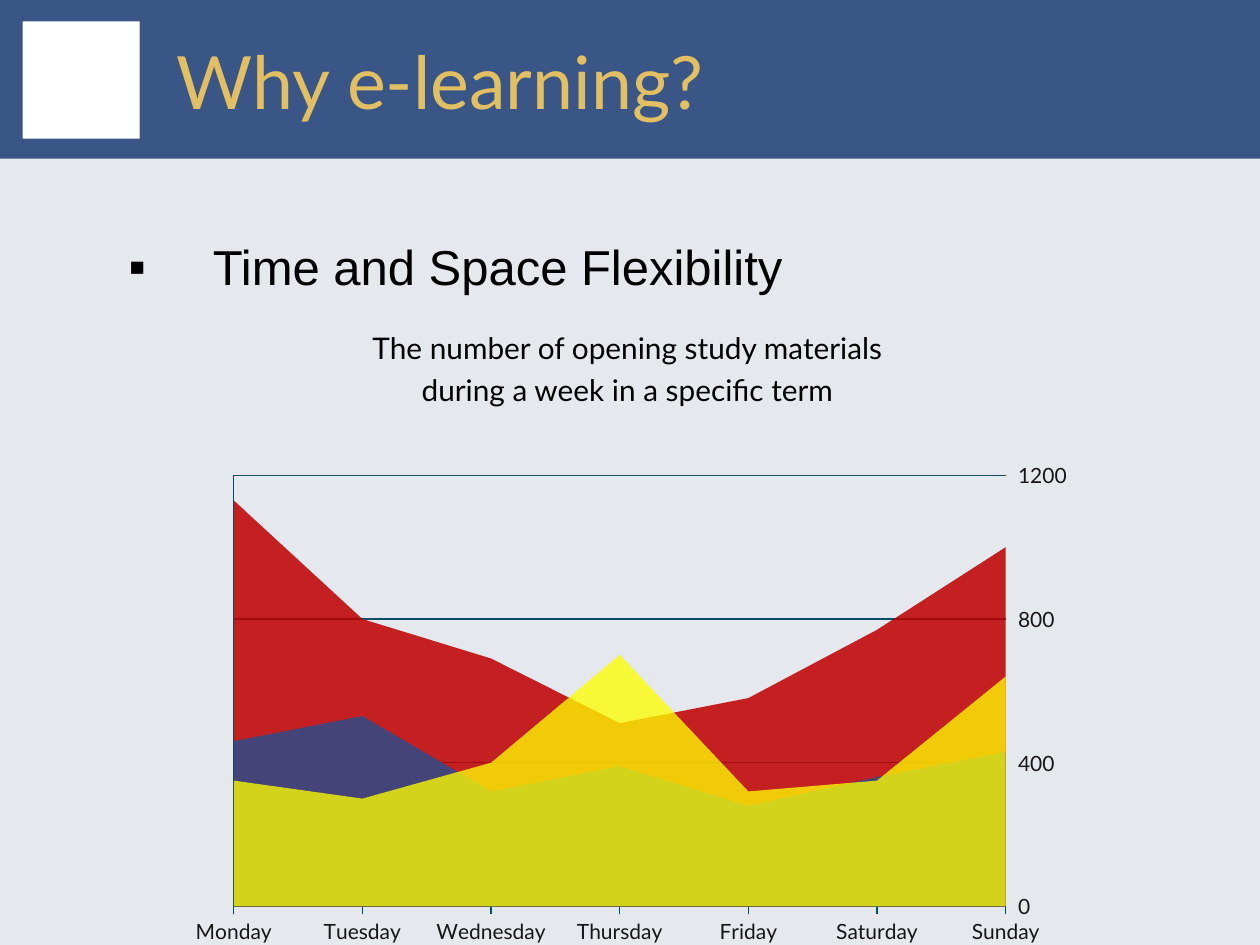
from dataclasses import dataclass

import pptx
import pptx.chart.data
import pptx.dml.color
import pptx.enum.chart
import pptx.enum.shapes
import pptx.enum.text
import pptx.oxml
import pptx.oxml.ns
import pptx.util
from pptx.util import Inches


@dataclass(frozen=True)
class Theme:
    background: str = "E5E8ED"
    band: str = "395686"
    white: str = "FFFFFF"
    title: str = "E1BF62"
    text: str = "000000"
    labels: str = "161616"
    axis: str = "004D66"
    heading_font: str = "Lato"
    body_font: str = "Arial"
    title_size: int = 42
    body_size: int = 28
    caption_size: int = 17
    label_size: int = 12


THEME = Theme()

DAYS = ["Monday", "Tuesday", "Wednesday", "Thursday", "Friday", "Saturday", "Sunday"]
# name, values, colour, opacity in percent
SERIES = [
    ("Series 1", [350, 300, 400, 700, 320, 350, 640], "FFFF00", 77),
    ("Series 2", [460, 530, 320, 390, 280, 360, 430], "444478", 100),
    ("Series 3", [1130, 800, 690, 510, 580, 770, 1000], "C00000", 86),
]


def rgb(colour):
    return pptx.dml.color.RGBColor.from_string(colour)


def add_child(parent, tag, **attributes):
    child = pptx.oxml.ns.qn(tag)
    element = parent.makeelement(child, attributes)
    parent.append(element)
    return element


def set_fill(fill, colour):
    fill.solid()
    fill.fore_color.rgb = rgb(colour)


def set_font(font, name, size, colour):
    font.name = name
    font.size = pptx.util.Pt(size)
    font.color.rgb = rgb(colour)


def add_rectangle(slide, left, top, width, height, colour):
    shape = slide.shapes.add_shape(
        pptx.enum.shapes.MSO_SHAPE.RECTANGLE,
        Inches(left), Inches(top), Inches(width), Inches(height),
    )
    shape.shadow.inherit = False
    set_fill(shape.fill, colour)
    shape.line.fill.background()
    return shape


def add_header(slide):
    """Draw the band and its square behind the placeholders."""
    band = add_rectangle(slide, 0, 0, 10, 1.26, THEME.band)
    square = add_rectangle(slide, 0.18, 0.17, 0.93, 0.93, THEME.white)
    title_element = slide.shapes.title._element
    for shape in (band, square):
        title_element.addprevious(shape._element)


def fill_placeholder(shape, text, left, top, width, height, anchor):
    shape.left, shape.top = Inches(left), Inches(top)
    shape.width, shape.height = Inches(width), Inches(height)
    frame = shape.text_frame
    frame.text = text
    frame.word_wrap = True
    frame.auto_size = pptx.enum.text.MSO_AUTO_SIZE.NONE
    frame.vertical_anchor = anchor
    paragraph = frame.paragraphs[0]
    paragraph.alignment = pptx.enum.text.PP_ALIGN.LEFT
    paragraph.space_before = pptx.util.Pt(0)
    return paragraph


def add_bullet(paragraph, character, indent):
    properties = paragraph._p.get_or_add_pPr()
    properties.set("marL", str(Inches(indent)))
    properties.set("indent", str(-Inches(indent)))
    colour = add_child(properties, "a:buClr")
    add_child(colour, "a:srgbClr", val=THEME.text)
    add_child(properties, "a:buFont", typeface=THEME.body_font)
    add_child(properties, "a:buChar", char=character)


def add_caption(slide, lines):
    box = slide.shapes.add_textbox(Inches(1.32), Inches(2.57), Inches(7.32), Inches(0.94))
    frame = box.text_frame
    frame.word_wrap = True
    frame.text = "\n".join(lines)
    for number, paragraph in enumerate(frame.paragraphs):
        paragraph.alignment = pptx.enum.text.PP_ALIGN.CENTER
        paragraph.space_before = pptx.util.Pt(0.2 * THEME.caption_size if number else 0)
        set_font(paragraph.font, THEME.heading_font, THEME.caption_size, THEME.text)


def set_line(line, colour, width):
    line.color.rgb = rgb(colour)
    line.width = pptx.util.Pt(width)


def format_axis(axis, tick):
    axis.major_tick_mark = tick
    axis.minor_tick_mark = pptx.enum.chart.XL_TICK_MARK.NONE
    set_font(axis.tick_labels.font, THEME.heading_font, THEME.label_size, THEME.labels)
    set_line(axis.format.line, THEME.axis, 0.75)


def set_plot_layout(chart, x, y, width, height):
    plot_area = chart._chartSpace.chart.plotArea
    for layout in plot_area.findall(pptx.oxml.ns.qn("c:layout")):
        plot_area.remove(layout)
    layout = plot_area.makeelement(pptx.oxml.ns.qn("c:layout"), {})
    plot_area.insert(0, layout)
    manual = add_child(layout, "c:manualLayout")
    settings = {"layoutTarget": "inner", "xMode": "edge", "yMode": "edge",
                "x": x, "y": y, "w": width, "h": height}
    for name, value in settings.items():
        add_child(manual, f"c:{name}", val=str(value))


def add_area_chart(slide):
    data = pptx.chart.data.CategoryChartData()
    data.categories = DAYS
    for name, values, _, _ in SERIES:
        data.add_series(name, values)
    chart = slide.shapes.add_chart(
        pptx.enum.chart.XL_CHART_TYPE.AREA,
        Inches(1.54), Inches(3.38), Inches(7.01), Inches(4.11), data,
    ).chart
    chart.has_title = False
    chart.has_legend = False
    set_font(chart.font, THEME.heading_font, THEME.label_size, THEME.labels)
    set_plot_layout(chart, 0.045, 0.096, 0.874, 0.835)

    plot = chart.plots[0]
    plot.vary_by_categories = False
    for series, (_, _, colour, opacity) in zip(plot.series, SERIES):
        set_fill(series.format.fill, colour)
        series.format.line.fill.background()
        if opacity < 100:
            fill_colour = series._element.find(".//" + pptx.oxml.ns.qn("a:srgbClr"))
            add_child(fill_colour, "a:alpha", val=str(opacity * 1000))

    format_axis(chart.category_axis, pptx.enum.chart.XL_TICK_MARK.OUTSIDE)
    value_axis = chart.value_axis
    format_axis(value_axis, pptx.enum.chart.XL_TICK_MARK.NONE)
    value_axis.tick_label_position = pptx.enum.chart.XL_TICK_LABEL_POSITION.HIGH
    value_axis.minimum_scale, value_axis.maximum_scale = 0, 1200
    value_axis.major_unit = 400
    value_axis.has_major_gridlines = True
    set_line(value_axis.major_gridlines.format.line, THEME.axis, 0.75)
    # The areas reach both edges of the plot.
    value_axis._element.find(pptx.oxml.ns.qn("c:crossBetween")).set("val", "midCat")


def main():
    presentation = pptx.Presentation()
    presentation.slide_width, presentation.slide_height = Inches(10), Inches(7.5)
    slide = presentation.slides.add_slide(presentation.slide_layouts[1])
    set_fill(slide.background.fill, THEME.background)
    add_header(slide)

    anchors = pptx.enum.text.MSO_ANCHOR
    title = fill_placeholder(slide.shapes.title, "Why e-learning?",
                             1.3, 0.17, 8.2, 0.93, anchors.MIDDLE)
    set_font(title.font, THEME.heading_font, THEME.title_size, THEME.title)
    point = fill_placeholder(slide.placeholders[1], "Time and Space Flexibility",
                             0.92, 1.83, 8.8, 0.81, anchors.TOP)
    add_bullet(point, "▪", 0.67)
    set_font(point.font, THEME.body_font, THEME.body_size, THEME.text)

    add_area_chart(slide)
    add_caption(slide, ["The number of opening study materials",
                        "during a week in a specific term"])
    presentation.save("out.pptx")


if __name__ == "__main__":
    main()
